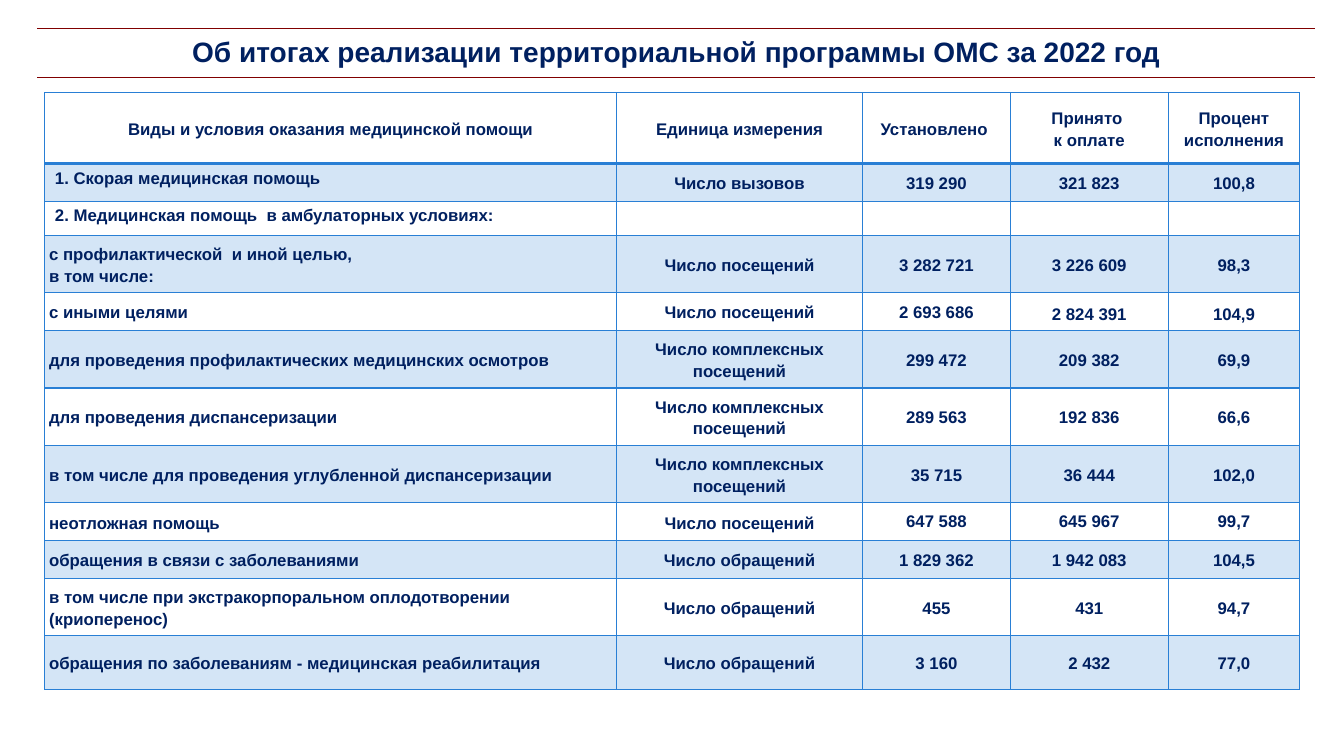
import pptx
import pptx.dml.color
import pptx.enum.text
import pptx.oxml
import pptx.oxml.ns
import pptx.util

ALIGN = pptx.enum.text.PP_ALIGN
ANCHOR = pptx.enum.text.MSO_ANCHOR

# Content: \v breaks a line, \n starts a paragraph
TITLE = "Об итогах реализации территориальной программы ОМС за 2022 год"
HEADINGS = ["Виды и условия оказания медицинской помощи", "Единица измерения",
            "Установлено ", "Принято \vк оплате", "Процент исполнения"]
VISITS = "Число посещений"
COMPLEX_VISITS = "Число комплексных\nпосещений"
CASES = "Число обращений"
CARE = [
    ["1. Скорая медицинская помощь", "Число вызовов", "319 290", "321 823", "100,8"],
    ["2. Медицинская помощь  в амбулаторных условиях:", "", "", "", ""],
    ["с профилактической  и иной целью, \vв том числе:", VISITS,
     "3 282 721", "3 226 609", "98,3"],
    ["с иными целями", VISITS, "2 693 686", "2 824 391", "104,9"],
    ["для проведения профилактических медицинских осмотров", COMPLEX_VISITS,
     "299 472", "209 382", "69,9"],
    ["для проведения диспансеризации", COMPLEX_VISITS, "289 563", "192 836", "66,6"],
    ["в том числе для проведения углубленной диспансеризации", COMPLEX_VISITS,
     "35 715", "36 444", "102,0"],
    ["неотложная помощь", VISITS, "647 588", "645 967", "99,7"],
    ["обращения в связи с заболеваниями", CASES, "1 829 362", "1 942 083", "104,5"],
    ["в том числе при экстракорпоральном оплодотворении (криоперенос)", CASES,
     "455", "431", "94,7"],
    ["обращения по заболеваниям - медицинская реабилитация", CASES,
     "3 160", "2 432", "77,0"],
]

# Column widths and row heights, in percent of the slide
COLUMNS = [42.54, 18.3, 11.0, 11.74, 9.8]
LOW, TALL = 5, 7.6
ROWS = [9.4, LOW, 4.47, TALL, LOW, TALL, TALL, TALL, LOW, LOW, TALL, 7.1]

# Cells that are not centred vertically, by (row, column)
ANCHORS = {(4, 3): ANCHOR.BOTTOM, (4, 4): ANCHOR.BOTTOM,
           **{(8, column): ANCHOR.TOP for column in (2, 3, 4)}}


def colour(code):
    return pptx.dml.color.RGBColor.from_string(code)


def write(frame, text, size=12, ink="002060", align=ALIGN.CENTER, spacing=None):
    frame.text = text
    for paragraph in frame.paragraphs:
        paragraph.alignment = align
        if spacing:
            paragraph.line_spacing = spacing
        for run in paragraph.runs:
            run.font.name = "Arial"
            run.font.size = pptx.util.Pt(size)
            run.font.bold = True
            run.font.color.rgb = colour(ink)
        if not text:
            paragraph._p.get_or_add_endParaRPr().set("sz", str(size * 100))


class Report:
    BLUE = "297FD5"
    RULE = "800000"

    def __init__(self):
        self.deck = pptx.Presentation()
        self.deck.slide_width = pptx.util.Inches(13.33)
        self.deck.slide_height = pptx.util.Inches(7.5)
        self.slide = self.deck.slides.add_slide(self.deck.slide_layouts[6])

    def x(self, percent):
        return int(self.deck.slide_width * percent / 100)

    def y(self, percent):
        return int(self.deck.slide_height * percent / 100)

    def borders(self, cell, ink, **widths):
        """Draw the sides L, R, T, B in points; a width of 0 hides a side."""
        for side, width in widths.items():
            paint = (f'<a:solidFill><a:srgbClr val="{ink}"/></a:solidFill>'
                     if width else '<a:noFill/>')
            cell._tc.get_or_add_tcPr().append(pptx.oxml.parse_xml(
                f'<a:ln{side} {pptx.oxml.ns.nsdecls("a")} '
                f'w="{int(pptx.util.Pt(width))}">{paint}</a:ln{side}>'))

    def shade(self, cell, opacity):
        cell.fill.solid()
        cell.fill.fore_color.rgb = colour(self.BLUE)
        tint = cell._tc.tcPr.find(pptx.oxml.ns.qn("a:solidFill"))[0]
        tint.append(tint.makeelement(pptx.oxml.ns.qn("a:alpha"),
                                     {"val": str(opacity * 1000)}))

    def grid(self, left, top, columns, rows):
        table = self.slide.shapes.add_table(
            len(rows), len(columns), self.x(left), self.y(top),
            self.x(sum(columns)), self.y(sum(rows))).table
        table.first_row = table.horz_banding = False
        for column, width in zip(table.columns, columns):
            column.width = self.x(width)
        for row, height in zip(table.rows, rows):
            row.height = self.y(height)
        return table

    def title(self, text, left, top, width, height):
        banner = self.grid(left, top, [width], [height]).cell(0, 0)
        banner.vertical_anchor = ANCHOR.MIDDLE
        write(banner.text_frame, text, size=20)
        self.borders(banner, self.RULE, L=0, R=0, T=1, B=1)
        banner.fill.background()

    def results(self, content, left, top, columns, rows):
        table = self.grid(left, top, columns, rows)
        for r, texts in enumerate(content):
            for c, text in enumerate(texts):
                self.result(table.cell(r, c), text, r, c)

    def result(self, cell, text, row, column):
        # Numbered sections and blanks keep the default insets
        section = column == 0 and row in (1, 2)
        if text and not section:
            cell.margin_left = cell.margin_right = pptx.util.Pt(3)
            cell.margin_top = cell.margin_bottom = pptx.util.Pt(4.5 if row else 5)
            cell.vertical_anchor = ANCHORS.get((row, column), ANCHOR.MIDDLE)
        write(cell.text_frame, text, spacing=None if section else 1.15,
              align=ALIGN.LEFT if row and column == 0 else ALIGN.CENTER)
        self.borders(cell, self.BLUE, L=1, R=1,
                     T=2.25 if row == 1 else 1, B=1 if row else 2.25)
        if row % 2:
            self.shade(cell, 20)
        else:
            cell.fill.background()


def main():
    report = Report()

    # Programme results
    report.results([HEADINGS] + CARE, 3.34, 12.27, COLUMNS, ROWS)

    # Title between two rules
    report.title(TITLE, 2.78, 3.8, 95.1, 6.4)

    report.deck.save("out.pptx")


if __name__ == "__main__":
    main()
